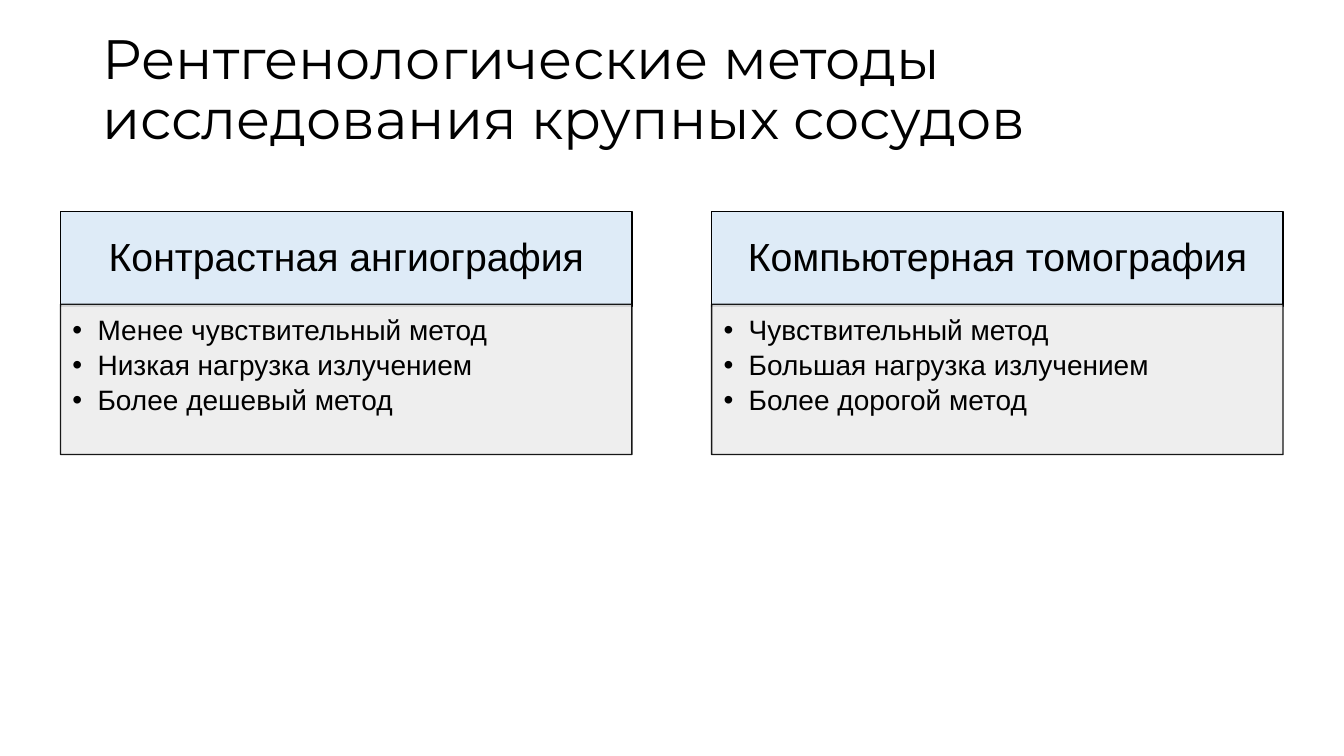
from lxml import etree
from pptx import Presentation
from pptx.dml.color import RGBColor
from pptx.enum.text import MSO_ANCHOR, MSO_AUTO_SIZE, PP_ALIGN
from pptx.oxml.ns import qn
from pptx.util import Pt

LEFT, CENTER = PP_ALIGN.LEFT, PP_ALIGN.CENTER
TOP, MIDDLE = MSO_ANCHOR.TOP, MSO_ANCHOR.MIDDLE
NO_AUTOFIT = MSO_AUTO_SIZE.NONE

COLORS = {"black": "000000", "heading": "DEEBF7", "list": "EDEDED"}
COMPARISON_LAYOUT = 4
COLUMN_LEFT, COLUMN_STEP, COLUMN_WIDTH = 43.2, 465.1, 408.2
INDENT = 18

TITLE = "Рентгенологические методы исследования крупных сосудов"
METHODS = [
    ("Контрастная ангиография",
     ["Менее чувствительный метод", "Низкая нагрузка излучением",
      "Более дешевый метод"]),
    ("Компьютерная томография",
     ["Чувствительный метод", "Большая нагрузка излучением",
      "Более дорогой метод"]),
]


def color(name):
    return RGBColor.from_string(COLORS[name])


def add_bullet(p):
    pPr = p._p.get_or_add_pPr()
    pPr.set("marL", str(Pt(INDENT)))
    pPr.set("indent", str(-Pt(INDENT)))
    etree.SubElement(pPr, qn("a:buFont"), typeface="Arial")
    etree.SubElement(pPr, qn("a:buChar"), char="•")


def write(sp, lines, size, font="Arial", align=LEFT, anchor=TOP,
          margins=(7.2, 3.6, 7.2, 3.6), after=0, bullets=False):
    tf = sp.text_frame
    tf.word_wrap = True
    tf.auto_size = NO_AUTOFIT
    tf.vertical_anchor = anchor
    (tf.margin_left, tf.margin_top,
     tf.margin_right, tf.margin_bottom) = map(Pt, margins)
    for i, text in enumerate(lines):
        p = tf.add_paragraph() if i else tf.paragraphs[0]
        if bullets:
            p.level = 1
            add_bullet(p)
        p.alignment = align
        p.line_spacing = 0.9
        p.space_before = Pt(0)
        p.space_after = Pt(after)
        r = p.add_run()
        r.text = text
        r.font.name = font
        r.font.size = Pt(size)
        r.font.bold = False
        r.font.color.rgb = color("black")


def place(sp, left, top, width, height):
    sp.left, sp.top, sp.width, sp.height = map(Pt, (left, top, width, height))


def paint(sp, fill, opacity=100):
    sp.fill.solid()
    sp.fill.fore_color.rgb = color(fill)
    sp.line.color.rgb = color("black")
    sp.line.width = Pt(1)
    if opacity < 100:
        for rgb in sp._element.spPr.iter(qn("a:srgbClr")):
            etree.SubElement(rgb, qn("a:alpha"), val=str(opacity * 1000))


def add_method(heading, body, left, name, points):
    place(heading, left, 151.2, COLUMN_WIDTH, 67.7)
    paint(heading, "heading")
    write(heading, [name], 28, align=CENTER, anchor=MIDDLE,
          margins=(16, 9, 16, 9))

    place(body, left, 217.4, COLUMN_WIDTH, 107.3)
    paint(body, "list", opacity=90)
    write(body, points, 20, margins=(8.5, 8.5, 11.4, 12.2), after=3.5,
          bullets=True)


def main():
    prs = Presentation()
    prs.slide_width, prs.slide_height = Pt(960), Pt(540)
    s = prs.slides.add_slide(prs.slide_layouts[COMPARISON_LAYOUT])

    # Title
    title = s.shapes.title
    place(title, 66.2, 40.3, 828, 50.4)
    write(title, [TITLE], 39.6, font="Montserrat", anchor=MIDDLE)

    # Two methods side by side: a heading over a list
    boxes = list(s.placeholders)[1:]
    for i, (name, points) in enumerate(METHODS):
        heading, body = boxes[2 * i:2 * i + 2]
        add_method(heading, body, COLUMN_LEFT + i * COLUMN_STEP, name, points)

    prs.save("out.pptx")


if __name__ == "__main__":
    main()
